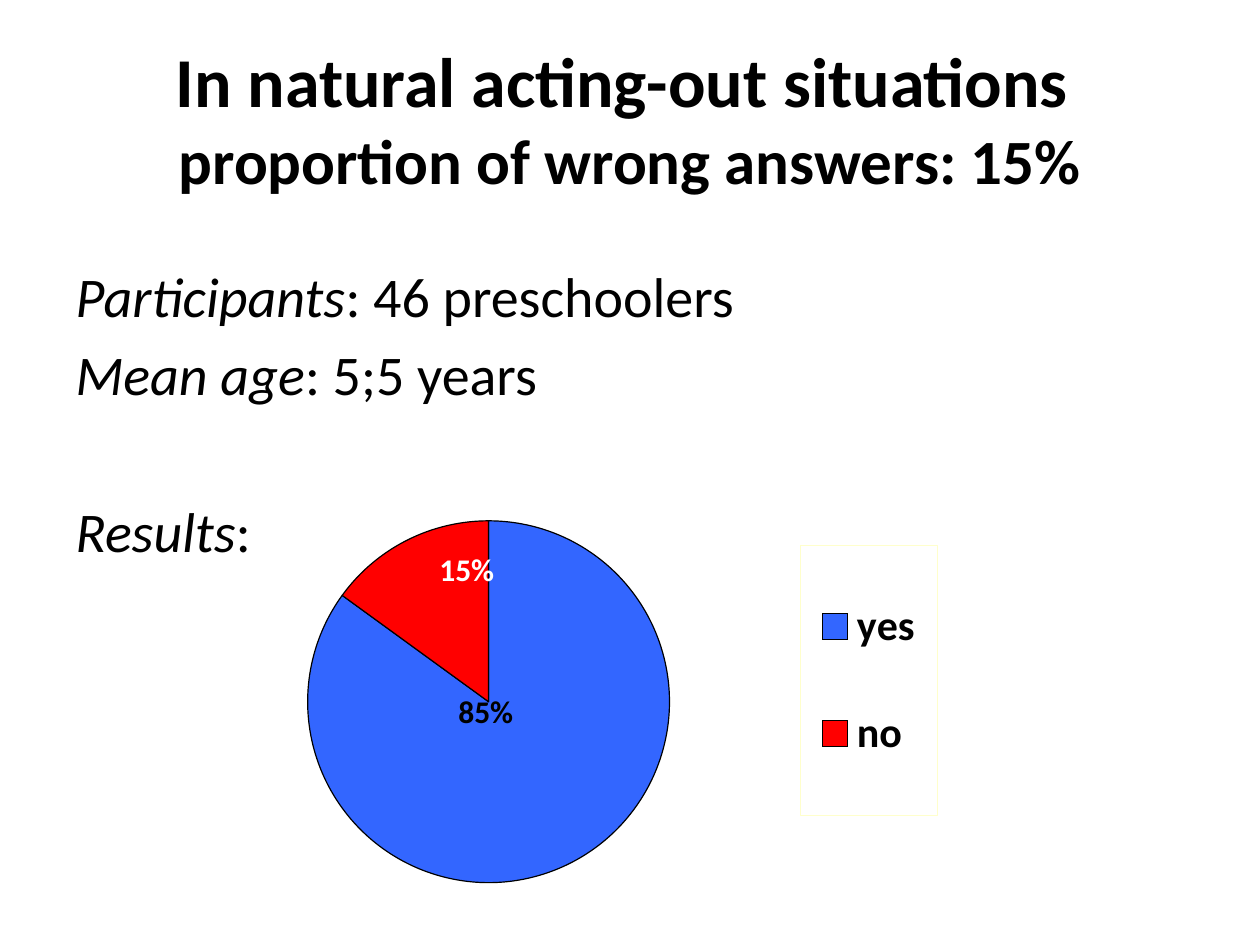
from lxml import etree
from pptx import Presentation
from pptx import util as u
from pptx.chart.data import CategoryChartData
from pptx.dml.color import RGBColor
from pptx.enum import chart as ch, text
from pptx.oxml import parse_xml
from pptx.oxml.ns import nsdecls, qn

SCALE = 914400 // 126  # EMU in one px
FONT = "Calibri"
COLORS = {"ink": "000000", "yes": "3366FF", "no": "FF0000",
          "label": "FFFFFF", "legend": "FFFFCC"}

TITLE_BOX = (63, 38, 1134, 158)
BODY_BOX = (63, 255, 1134, 624)
CHART_BOX = (194, 433, 843, 546)

TITLE = [("In natural acting-out situations ", 40),
         ("proportion of wrong answers: 15%", 36)]
FACTS = [("Participants", ": 46 preschoolers", None),
         ("Mean age", ": 5;5 years", None),
         ("Results", ":", 51)]
# answer, share, label colour, label shift (px) from the middle of its slice
ANSWERS = [("yes", 85, "ink", (-44, -70)),
           ("no", 15, "label", (19, -51))]


def px(n):
    return u.Emu(n * SCALE)


def rgb(name):
    return RGBColor.from_string(COLORS[name])


def place(sp, box):
    for side, n in zip(("left", "top", "width", "height"), box):
        setattr(sp, side, px(n))


def style(font, color="ink", **values):
    values = {"name": FONT, **values}
    for key, value in values.items():
        setattr(font, key, value)
    font.color.rgb = rgb(color)


def add_run(p, words, **values):
    r = p.add_run()
    r.text = words
    style(r.font, **values)


def add_layout(after, box, spot, inner=False):
    """Insert a manual layout, in px of the chart box, after an element."""
    layout = parse_xml(f"<c:layout {nsdecls('c')}><c:manualLayout/></c:layout>")
    manual = layout[0]
    values = {"layoutTarget": "inner"} if inner else {}
    if len(spot) == 4:
        values.update(xMode="edge", yMode="edge")
    for key, n, full in zip("xywh", spot, box[2:] * 2):
        values[key] = f"{n / full:.3f}"
    for key, value in values.items():
        etree.SubElement(manual, qn(f"c:{key}")).set("val", value)
    after.addnext(layout)


def fill_title(sp, box):
    place(sp, box)
    tf = sp.text_frame
    tf.vertical_anchor = text.MSO_ANCHOR.MIDDLE
    p = tf.paragraphs[0]
    p.alignment = text.PP_ALIGN.CENTER
    for i, (words, size) in enumerate(TITLE):
        if i:
            p.add_line_break()
        add_run(p, words, size=u.Pt(size), bold=True)


def fill_facts(sp, box):
    place(sp, box)
    tf = sp.text_frame
    for i, (term, rest, before) in enumerate(FACTS):
        p = tf.add_paragraph() if i else tf.paragraphs[0]
        pPr = p._p.get_or_add_pPr()
        pPr.set("marL", str(px(48)))
        pPr.set("indent", str(px(-48)))
        if before:
            p.space_before = u.Pt(before)
        etree.SubElement(pPr, qn("a:buNone"))
        add_run(p, term, size=u.Pt(32), italic=True)
        add_run(p, rest, size=u.Pt(32), italic=False)


def add_legend(chart, box):
    chart.has_legend = True
    legend = chart.legend
    legend.position = ch.XL_LEGEND_POSITION.RIGHT
    legend.include_in_layout = False
    style(legend.font, size=u.Pt(24), bold=True)
    root = chart.element
    for old in root.xpath(".//c:legend/c:layout"):
        old.getparent().remove(old)
    add_layout(root.xpath(".//c:legend/c:legendPos")[0], box, (606, 112, 137, 270))
    root.xpath(".//c:legend/c:overlay")[0].addnext(parse_xml(
        f'<c:spPr {nsdecls("c", "a")}><a:noFill/><a:ln w="3175"><a:solidFill>'
        f'<a:srgbClr val="{COLORS["legend"]}"/></a:solidFill></a:ln></c:spPr>'))


def add_pie(s, box):
    data = CategoryChartData(number_format="General")
    data.categories = [a[0] for a in ANSWERS]
    data.add_series("Series 1", [a[1] for a in ANSWERS])
    frame = s.shapes.add_chart(ch.XL_CHART_TYPE.PIE, *map(px, box), data)
    chart = frame.chart
    chart.has_title = False
    style(chart.font, size=u.Pt(12))
    plot = chart.plots[0]
    plot.vary_by_categories = True
    series = plot.series[0]
    labels = series.data_labels
    for key, value in {"show_percentage": True, "show_value": False,
                       "number_format": "0%",
                       "number_format_is_linked": False}.items():
        setattr(labels, key, value)
    style(labels.font, size=u.Pt(18), bold=True)

    for i, (answer, _, color, _) in enumerate(ANSWERS):
        point = series.points[i]
        point.format.fill.solid()
        point.format.fill.fore_color.rgb = rgb(answer)
        point.format.line.color.rgb = rgb("ink")
        point.format.line.width = u.Pt(0.69)
        label = point.data_label
        style(label.font, color, size=u.Pt(18), bold=True)
        label.position = ch.XL_LABEL_POSITION.CENTER

    root = chart.element
    for dLbl, answer in zip(root.xpath(".//c:dLbl"), ANSWERS):
        dLbl.find(qn("c:showVal")).set("val", "0")
        dLbl.find(qn("c:showPercent")).set("val", "1")
        add_layout(dLbl.find(qn("c:idx")), box, answer[3])

    area = root.xpath(".//c:plotArea")[0]
    for old in area.findall(qn("c:layout")):
        area.remove(old)
    anchor = etree.Element(qn("c:layout"))
    area.insert(0, anchor)
    add_layout(anchor, box, (50, 88, 490, 362), inner=True)
    area.remove(anchor)
    add_legend(chart, box)


def main():
    prs = Presentation()
    prs.slide_width, prs.slide_height = px(1260), px(945)
    s = prs.slides.add_slide(prs.slide_layouts[1])
    fill_title(s.shapes.title, TITLE_BOX)
    fill_facts(s.placeholders[1], BODY_BOX)
    add_pie(s, CHART_BOX)
    prs.save("out.pptx")


if __name__ == "__main__":
    main()
